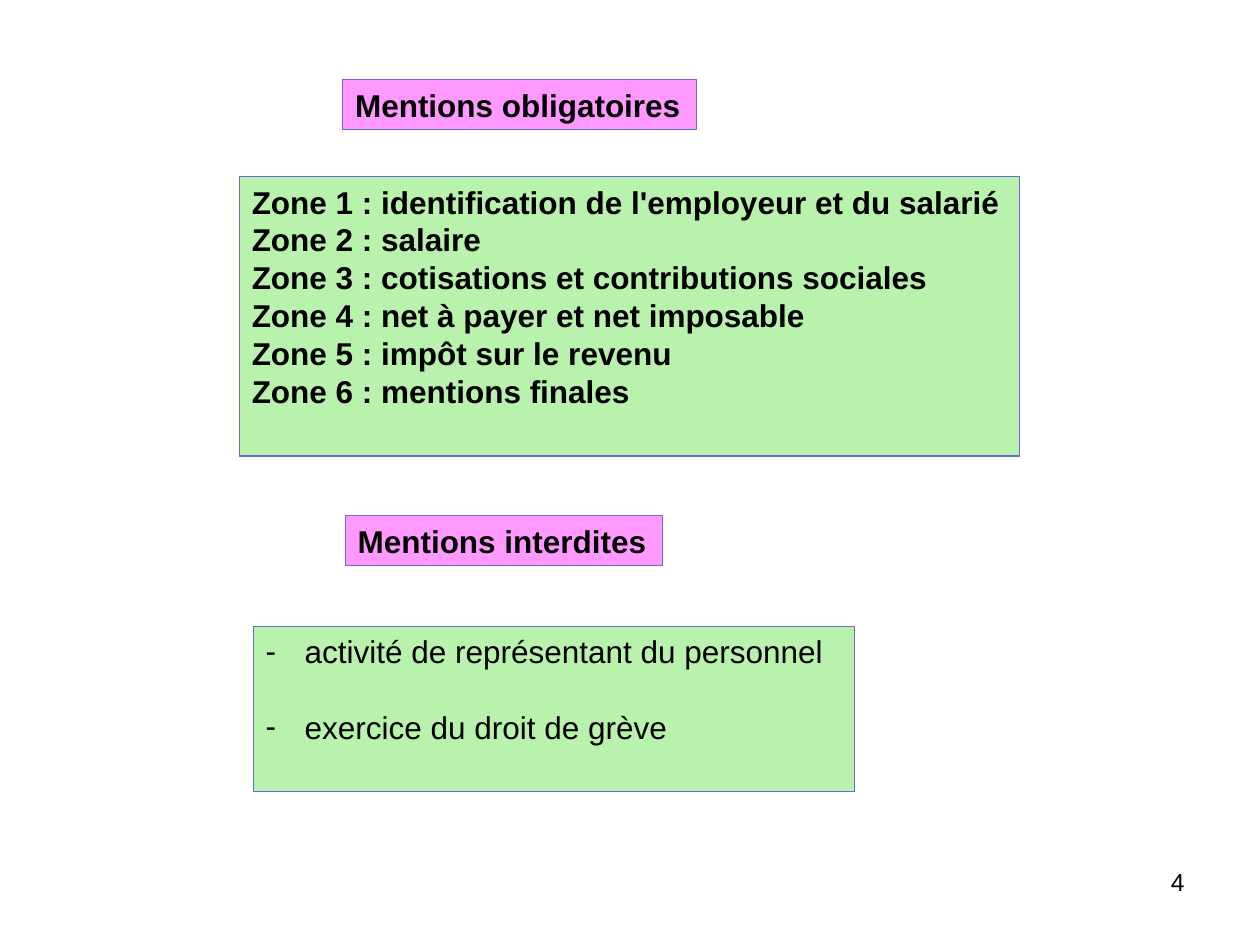
from lxml import etree
from pptx import Presentation
from pptx.dml.color import RGBColor
from pptx.enum.shapes import MSO_SHAPE
from pptx.enum.text import MSO_ANCHOR, PP_ALIGN
from pptx.oxml.ns import qn
from pptx.util import Inches, Pt

RECT = MSO_SHAPE.RECTANGLE
TOP = MSO_ANCHOR.TOP
LEFT, RIGHT = PP_ALIGN.LEFT, PP_ALIGN.RIGHT

COLORS = {"title": "FF99FF", "list": "B9F2AC", "line": "6B6BCF", "text": "000000"}
FONT = "Arial"
LINE_PITCH = Pt(21.6)
INDENT = Inches(0.31)

# Content: position, fill, bold, dashed, lines
BOXES = [
    ((2.72, 0.63, 2.81, 0.4), "title", True, False, ["Mentions obligatoires"]),
    ((1.9, 1.4, 6.19, 2.22), "list", True, False, [
        "Zone 1 : identification de l'employeur et du salarié",
        "Zone 2 : salaire",
        "Zone 3 : cotisations et contributions sociales",
        "Zone 4 : net à payer et net imposable",
        "Zone 5 : impôt sur le revenu",
        "Zone 6 : mentions finales",
    ]),
    ((2.74, 4.09, 2.52, 0.4), "title", True, False, ["Mentions interdites"]),
    ((2.01, 4.97, 4.77, 1.31), "list", False, True, [
        "activité de représentant du personnel",
        "exercice du droit de grève",
    ]),
]
PAGE_NUMBER = ("4", (7.17, 6.83, 2.33, 0.52))


def color(name):
    return RGBColor.from_string(COLORS[name])


def add_run(p, text, size, bold=False):
    r = p.add_run()
    r.text = text
    r.font.name, r.font.size, r.font.bold = FONT, Pt(size), bold
    r.font.color.rgb = color("text")


def add_dash(p):
    pPr = p._p.get_or_add_pPr()
    pPr.set("marL", str(INDENT))
    pPr.set("indent", str(-INDENT))
    etree.SubElement(pPr, qn("a:buFont"), typeface=FONT)
    etree.SubElement(pPr, qn("a:buChar"), char="-")


def add_box(slide, place, fill, bold, dashed, lines):
    sp = slide.shapes.add_shape(RECT, *map(Inches, place))
    sp.shadow.inherit = False
    sp.fill.solid()
    sp.fill.fore_color.rgb = color(fill)
    sp.line.color.rgb = color("line")
    sp.line.width = Pt(0.75)
    tf = sp.text_frame
    tf.word_wrap = True
    tf.vertical_anchor = TOP
    tf.margin_right = 0
    for i, line in enumerate(lines):
        p = tf.paragraphs[0] if i == 0 else tf.add_paragraph()
        p.alignment = LEFT
        p.line_spacing = LINE_PITCH
        if dashed:
            p.space_after = LINE_PITCH  # one empty line between items
            add_dash(p)
        add_run(p, line, 18, bold)


prs = Presentation()
prs.slide_width, prs.slide_height = Inches(10), Inches(7.5)
slide = prs.slides.add_slide(prs.slide_layouts[6])

# Page number
number, place = PAGE_NUMBER
tf = slide.shapes.add_textbox(*map(Inches, place)).text_frame
tf.word_wrap = True
tf.paragraphs[0].alignment = RIGHT
add_run(tf.paragraphs[0], number, 14)

# Headings and lists
for box in BOXES:
    add_box(slide, *box)

prs.save("out.pptx")
